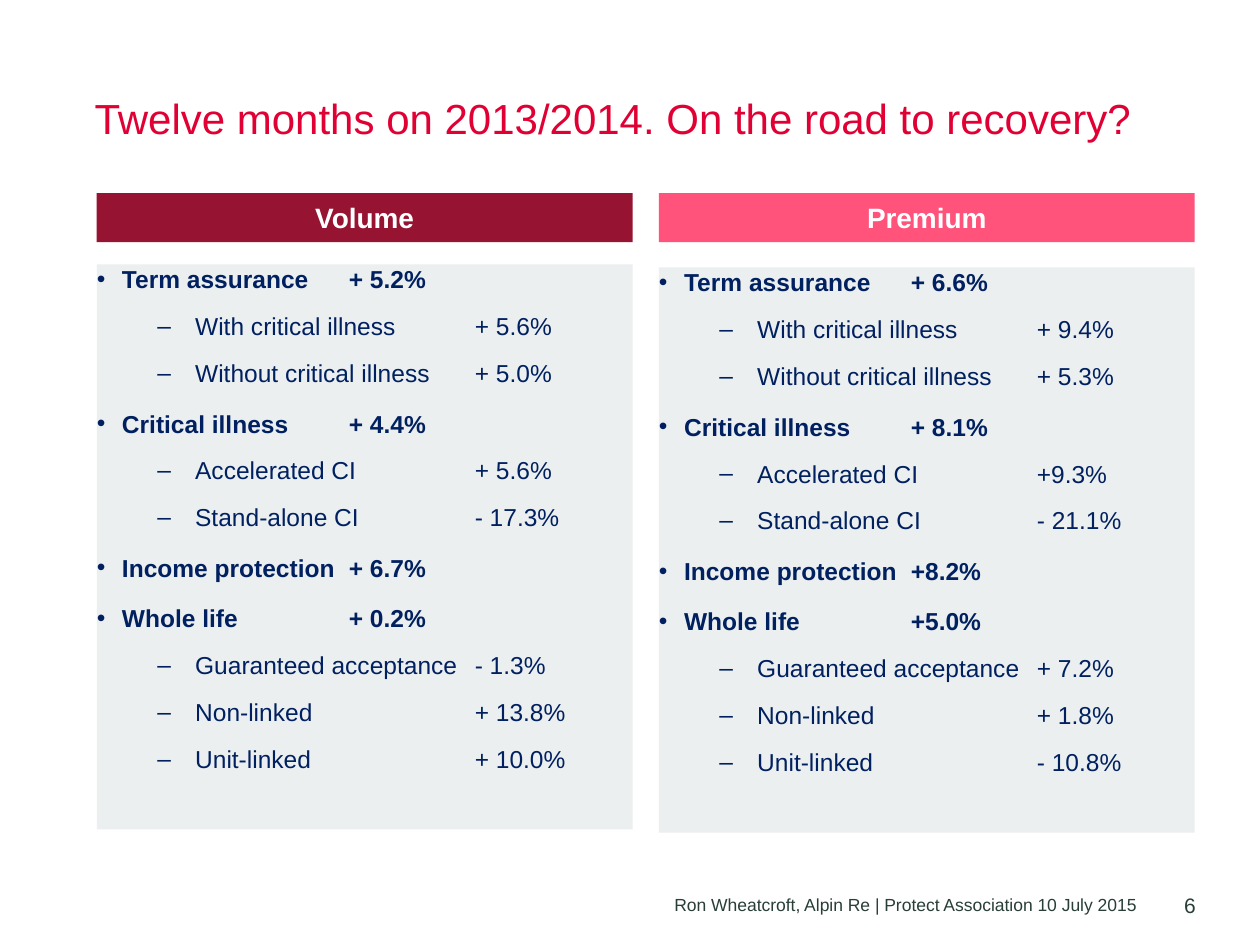
import pptx
import pptx.util
import pptx.dml.color
import pptx.enum.shapes
import pptx.enum.text
import pptx.oxml.ns
import lxml.etree

Pt = pptx.util.Pt
ALIGN = pptx.enum.text.PP_ALIGN
ANCHOR = pptx.enum.text.MSO_ANCHOR

COLORS = {
    "title": "E00034",
    "volume": "961331",
    "premium": "FF537B",
    "panel": "ECEFEF",
    "list": "002060",
    "header": "FFFFFF",
    "footer": "283E36",
}
LEVELS = {
    0: {"margin": 14.4, "hang": 14.4, "before": 12, "bullet": "•"},
    2: {"margin": 56.2, "hang": 21.6, "before": 10, "bullet": "–"},
}
PRODUCTS = [
    (0, "Term assurance\t"),
    (2, "With critical illness\t"),
    (2, "Without critical illness\t"),
    (0, "Critical illness\t"),
    (2, "Accelerated CI\t"),
    (2, "Stand-alone CI\t"),
    (0, "Income protection\t"),
    (0, "Whole life\t"),
    (2, "Guaranteed acceptance\t"),
    (2, "Non-linked\t\t"),
    (2, "Unit-linked\t\t"),
]
VOLUME = ["+ 5.2%", "+ 5.6%", "+ 5.0%", "+ 4.4%", "+ 5.6%", "- 17.3%",
          "+ 6.7%", "+ 0.2%", "- 1.3%", "+ 13.8%", "+ 10.0%"]
PREMIUM = ["+ 6.6%", "+ 9.4%", "+ 5.3%", "+ 8.1%", "+9.3%", "- 21.1%",
           "+8.2%", "+5.0%", "+ 7.2%", "+ 1.8%", "- 10.8%"]


def rgb(name):
    return pptx.dml.color.RGBColor.from_string(COLORS[name])


def place(shape, box):
    shape.left, shape.top, shape.width, shape.height = (Pt(v) for v in box)


def prepare_frame(shape, anchor, inset=0):
    frame = shape.text_frame
    frame.word_wrap = True
    frame.auto_size = pptx.enum.text.MSO_AUTO_SIZE.NONE
    frame.vertical_anchor = anchor
    frame.margin_left = frame.margin_right = Pt(inset)
    frame.margin_top = frame.margin_bottom = Pt(inset)
    return frame


def add_span(para, text, size, color, bold=False):
    span = para.add_run()
    span.text = text
    span.font.name = "Arial"
    span.font.size = Pt(size)
    span.font.bold = bold
    span.font.color.rgb = rgb(color)


def add_bullet(para, level):
    style = LEVELS[level]
    para.level = level
    props = para._p.get_or_add_pPr()
    props.set("marL", str(Pt(style["margin"])))
    props.set("indent", str(-Pt(style["hang"])))
    props.set("defTabSz", str(Pt(72)))
    for tag, key, value in (("a:buFont", "typeface", "Arial"),
                            ("a:buChar", "char", style["bullet"])):
        lxml.etree.SubElement(props, pptx.oxml.ns.qn(tag)).set(key, value)


def fill_title(title, box):
    place(title, box)
    para = prepare_frame(title, ANCHOR.TOP).paragraphs[0]
    para.alignment = ALIGN.LEFT
    para.line_spacing = 0.9
    add_span(para, "Twelve months on 2013/2014. On the road to recovery?", 24, "title")


def add_header(page, box, text, color):
    header = page.shapes.add_shape(
        pptx.enum.shapes.MSO_SHAPE.RECTANGLE, *(Pt(v) for v in box))
    header.shadow.inherit = False
    header.fill.solid()
    header.fill.fore_color.rgb = rgb(color)
    header.line.fill.background()
    para = prepare_frame(header, ANCHOR.MIDDLE, 2.9).paragraphs[0]
    para.alignment = ALIGN.CENTER
    add_span(para, text, 16, "header", True)


def fill_list(body, box, values):
    place(body, box)
    body.fill.solid()
    body.fill.fore_color.rgb = rgb("panel")
    frame = prepare_frame(body, ANCHOR.TOP)
    for index, ((level, label), value) in enumerate(zip(PRODUCTS, values)):
        para = frame.add_paragraph() if index else frame.paragraphs[0]
        add_bullet(para, level)
        para.space_before = Pt(LEVELS[level]["before"] if index else 0)
        add_span(para, label + value, 14, "list", level == 0)


def add_footer_text(page, box, text, size):
    footer = page.shapes.add_textbox(*(Pt(v) for v in box))
    para = prepare_frame(footer, ANCHOR.BOTTOM).paragraphs[0]
    para.alignment = ALIGN.RIGHT
    add_span(para, text, size, "footer")


def main():
    deck = pptx.Presentation()
    deck.slide_width, deck.slide_height = Pt(720), Pt(540)
    page = deck.slides.add_slide(deck.slide_layouts[3])
    title, *bodies = page.placeholders
    for spare in bodies[2:]:
        spare.element.getparent().remove(spare.element)

    fill_title(title, (54, 56.2, 635, 54.7))
    columns = [
        ("Volume", "volume", 55.3, 151, VOLUME),
        ("Premium", "premium", 376.5, 152.8, PREMIUM),
    ]
    for body, (name, color, left, top, values) in zip(bodies, columns):
        add_header(page, (left, 110.4, 306.2, 28), name, color)
        fill_list(body, (left, top, 306.2, 323), values)
    add_footer_text(page, (184.3, 511.9, 465, 10.8),
                    "Ron Wheatcroft, Alpin Re | Protect Association 10 July 2015", 10)
    add_footer_text(page, (666, 509.8, 17.3, 14.4), "6", 12)
    deck.save("out.pptx")


if __name__ == "__main__":
    main()
